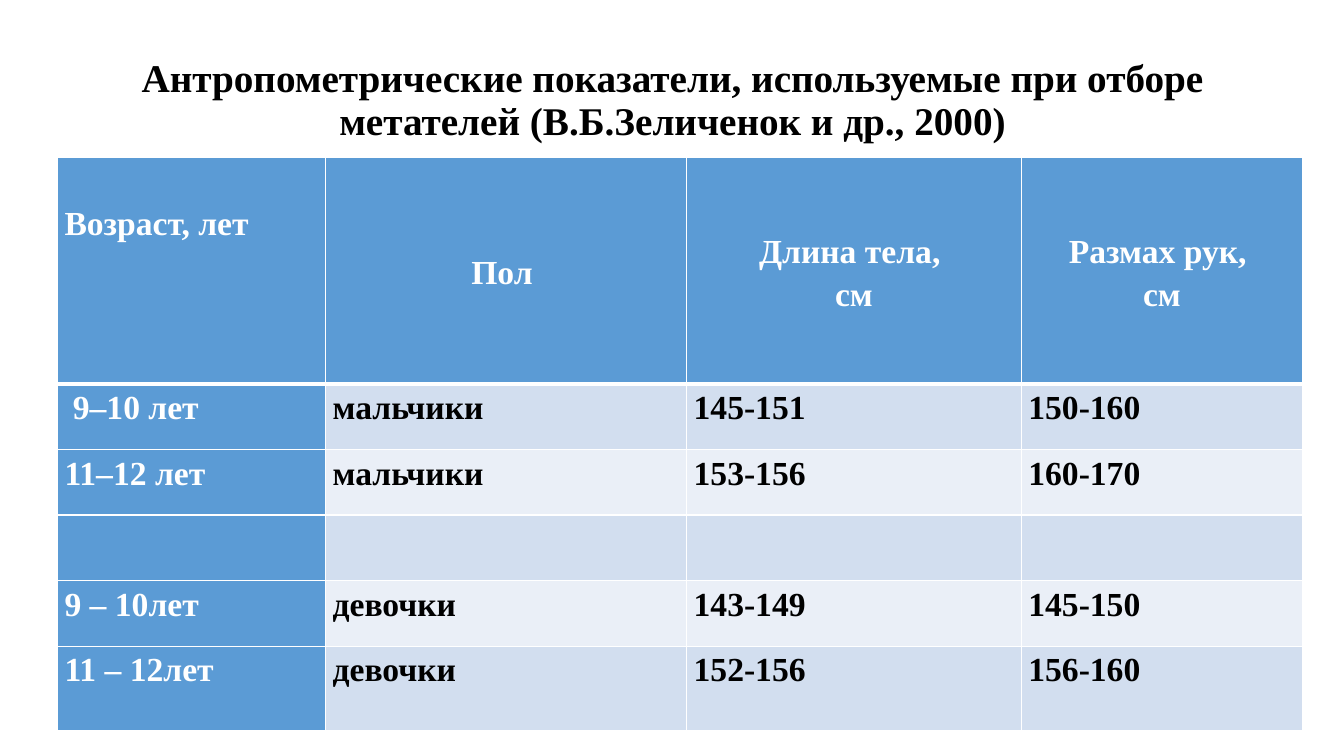
import lxml.etree
import pptx
import pptx.dml.color
import pptx.enum.text
import pptx.oxml.ns
import pptx.util

Inches = pptx.util.Inches
Pt = pptx.util.Pt
ALIGN = pptx.enum.text.PP_ALIGN
ANCHOR = pptx.enum.text.MSO_ANCHOR

TITLE = ("Антропометрические показатели, используемые при отборе "
         "метателей (В.Б.Зеличенок и др., 2000)")
HEADER = ["Возраст, лет", "Пол ", "Длина тела, \nсм", "Размах рук, \nсм"]
ROWS = [
    [" 9–10 лет", "мальчики", "145-151", "150-160"],
    ["11–12 лет", "мальчики", "153-156", "160-170"],
    ["", "", "", ""],
    ["9 – 10лет", "девочки", "143-149", "145-150"],
    ["11 – 12лет", "девочки", "152-156", "156-160"],
]
COLUMN_WIDTHS = [2.66, 3.58, 3.32, 2.79]
ROW_HEIGHTS = [2.25, 0.65, 0.65, 0.65, 0.65, 0.84]
AGE_HEADER_DROP = 0.42

THEME = {
    "font": "Times New Roman",
    "title_size": 28,
    "cell_size": 24,
    "accent": "5B9BD5",
    "bands": ["D2DEEF", "EAEFF7"],
    "light": "FFFFFF",
    "dark": "000000",
    "rule": 1,
    "header_rule": 3,
}


def rgb(value):
    return pptx.dml.color.RGBColor.from_string(value)


def write(frame, text, size, color, align, spacing):
    """Fill a text frame, one paragraph for each line of text."""
    for index, line in enumerate(text.split("\n")):
        para = frame.add_paragraph() if index else frame.paragraphs[0]
        para.alignment = align
        para.line_spacing = spacing
        span = para.add_run()
        span.text = line
        span.font.name = THEME["font"]
        span.font.size = Pt(size)
        span.font.bold = True
        span.font.color.rgb = rgb(color)


def add_borders(cell, widths):
    """Draw cell borders; widths maps the sides L, R, T, B to points."""
    properties = cell._tc.get_or_add_tcPr()
    qn = pptx.oxml.ns.qn
    for side, width in widths.items():
        line = lxml.etree.SubElement(properties, qn("a:ln" + side), w=str(Pt(width)))
        fill = lxml.etree.SubElement(line, qn("a:solidFill"))
        lxml.etree.SubElement(fill, qn("a:srgbClr"), val=THEME["light"])


def format_cell(cell, text, row, column):
    is_header = row == 0
    is_accent = is_header or column == 0
    is_centred = is_header and column > 0
    rule, header_rule = THEME["rule"], THEME["header_rule"]
    add_borders(cell, {"L": rule, "R": rule,
                       "T": header_rule if row == 1 else rule,
                       "B": header_rule if is_header else rule})
    cell.fill.solid()
    cell.fill.fore_color.rgb = rgb(
        THEME["accent"] if is_accent else THEME["bands"][(row - 1) % 2])
    cell.margin_left = cell.margin_right = Inches(0.07)
    cell.margin_top = Inches(AGE_HEADER_DROP if is_header and column == 0 else 0)
    cell.margin_bottom = 0
    cell.vertical_anchor = ANCHOR.MIDDLE if is_centred else ANCHOR.TOP
    if text:
        write(cell.text_frame, text, THEME["cell_size"],
              THEME["light"] if is_accent else THEME["dark"],
              ALIGN.CENTER if is_centred else ALIGN.LEFT, 1.15)


def add_title(page):
    title = page.shapes.title
    title.left, title.top = Inches(0.92), Inches(0.4)
    title.width, title.height = Inches(11.5), Inches(1.21)
    title.text_frame.word_wrap = True
    title.text_frame.vertical_anchor = ANCHOR.MIDDLE
    write(title.text_frame, TITLE, THEME["title_size"], THEME["dark"],
          ALIGN.CENTER, 0.9)


def add_measurements(page):
    content = [HEADER] + ROWS
    table = page.shapes.add_table(
        len(content), len(HEADER), Inches(0.57), Inches(1.56),
        Inches(sum(COLUMN_WIDTHS)), Inches(sum(ROW_HEIGHTS))).table
    table.first_col = True
    for column, width in zip(table.columns, COLUMN_WIDTHS):
        column.width = Inches(width)
    for row, height in zip(table.rows, ROW_HEIGHTS):
        row.height = Inches(height)
    for row, texts in enumerate(content):
        for column, text in enumerate(texts):
            format_cell(table.cell(row, column), text, row, column)


def main():
    deck = pptx.Presentation()
    deck.slide_width, deck.slide_height = Inches(13.33), Inches(7.5)
    page = deck.slides.add_slide(deck.slide_layouts.get_by_name("Title Only"))
    add_title(page)
    add_measurements(page)
    deck.save("out.pptx")


if __name__ == "__main__":
    main()
